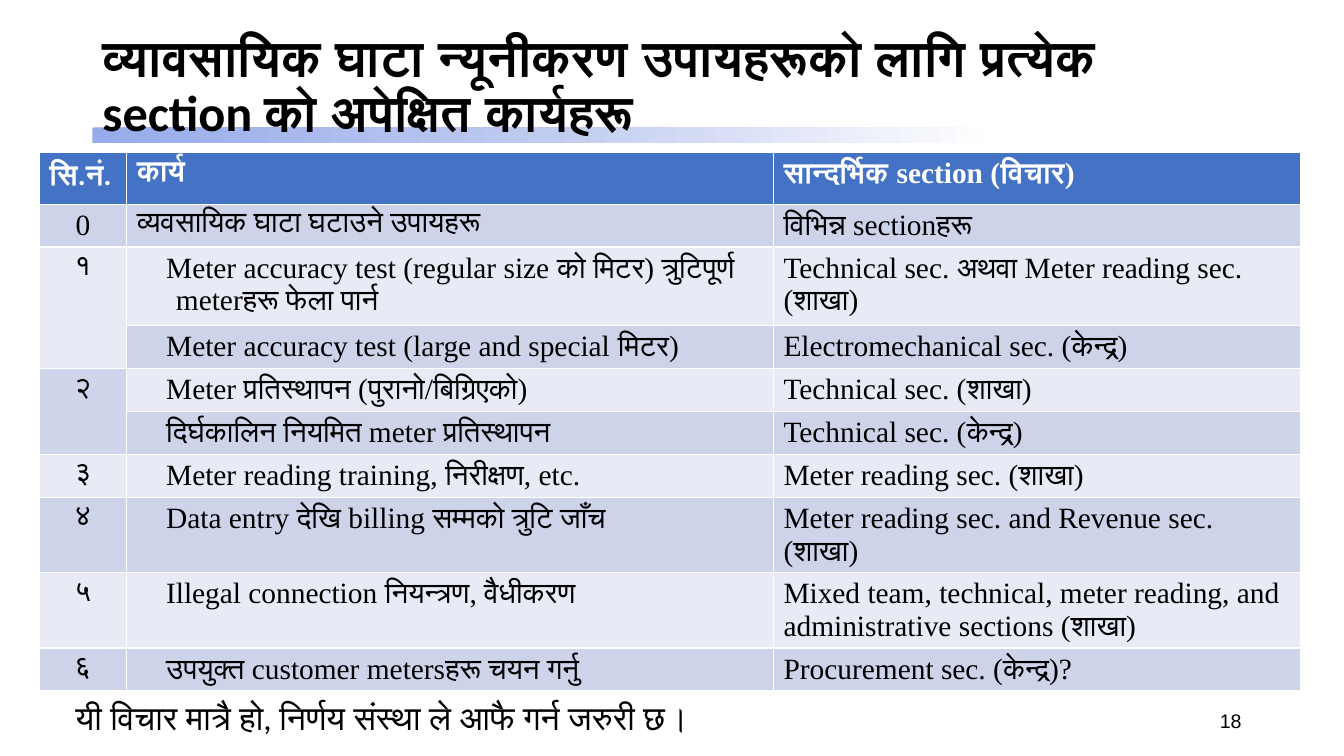
from copy import deepcopy
from pptx import Presentation
from pptx.dml.color import RGBColor as RGB
from pptx.enum.shapes import MSO_SHAPE as SHAPE
from pptx.enum.text import MSO_ANCHOR as ANCHOR, PP_ALIGN as ALIGN
from pptx.util import Pt

COLORS = {
    "black": "000000", "white": "FFFFFF", "head": "4472C4",
    "dark": "CDD4EA", "light": "E8EBF5", "merged": "CFD5EA",
    "bar": "96ABEA", "mid": "C0CBF0",
}
SERIF = "Times New Roman"


def color(name):
    return RGB.from_string(COLORS[name])


def write(frame, text, size, face, bold=False, ink="black", align=ALIGN.LEFT):
    """Fill a text frame with one styled paragraph and return it."""
    frame.word_wrap = True
    para = frame.paragraphs[0]
    para.text = text
    para.alignment = align
    font = para.font
    font.size, font.name, font.bold = Pt(size), face, bold
    font.color.rgb = color(ink)
    return para


deck = Presentation()
deck.slide_width, deck.slide_height = Pt(960), Pt(540)
slide = deck.slides.add_slide(deck.slide_layouts[5])
shapes = slide.shapes

# Title over a fading bar
title = shapes.title
title.left, title.top, title.width, title.height = Pt(66), Pt(19.5), Pt(828), Pt(86)
title.text_frame.vertical_anchor = ANCHOR.MIDDLE
para = write(title.text_frame,
             "व्यावसायिक घाटा न्यूनीकरण उपायहरूको लागि प्रत्येक section को अपेक्षित कार्यहरू",
             36, "Calibri", bold=True)
para.line_spacing = 0.9

bar = shapes.add_shape(SHAPE.ROUNDED_RECTANGLE, Pt(66), Pt(91), Pt(653), Pt(11.5))
bar.adjustments[0] = 0.1
bar.shadow.inherit = False
bar.line.fill.background()
bar.fill.gradient()
bar.fill.gradient_angle = 0
first = bar.element.spPr.find(".//{*}gs")
first.addnext(deepcopy(first))
for stop, (spot, name) in zip(bar.fill.gradient_stops,
                              [(0, "bar"), (0.5, "mid"), (0.99, "white")]):
    stop.position = spot
    stop.color.rgb = color(name)
title.element.addprevious(bar.element)

# Table of tasks and sections
rows = [
    ("सि.नं.", "कार्य", "सान्दर्भिक section (विचार)"),
    ("0", "व्यवसायिक घाटा घटाउने उपायहरू", "विभिन्न sectionहरू"),
    ("१", "Meter accuracy test (regular size को मिटर) त्रुटिपूर्ण meterहरू फेला पार्न",
     "Technical sec. अथवा Meter reading sec. (शाखा)"),
    ("", "Meter accuracy test (large and special मिटर)", "Electromechanical sec. (केन्द्र)"),
    ("२", "Meter प्रतिस्थापन (पुरानो/बिग्रिएको)", "Technical sec. (शाखा)"),
    ("", "दिर्घकालिन नियमित meter प्रतिस्थापन", "Technical sec. (केन्द्र)"),
    ("३", "Meter reading training, निरीक्षण, etc.", "Meter reading sec. (शाखा)"),
    ("४", "Data entry देखि billing सम्मको त्रुटि जाँच",
     "Meter reading sec. and Revenue sec. (शाखा)"),
    ("५", "Illegal connection नियन्त्रण, वैधीकरण",
     "Mixed team, technical, meter reading, and administrative sections (शाखा)"),
    ("६", "उपयुक्त customer metersहरू चयन गर्नु", "Procurement sec. (केन्द्र)?"),
]
heights = [37, 30, 56, 30.7, 30.7, 30.7, 30.7, 53.3, 53.3, 30.7]
widths = [62.5, 462, 376.5]
table = shapes.add_table(len(rows), 3, Pt(28), Pt(109), Pt(sum(widths)), Pt(sum(heights))).table
for col, width in zip(table.columns, widths):
    col.width = Pt(width)
for r, (row, height) in enumerate(zip(rows, heights)):
    table.rows[r].height = Pt(height)
    head = r == 0
    for c, text in enumerate(row):
        cell = table.cell(r, c)
        cell.fill.solid()
        cell.fill.fore_color.rgb = color("head" if head else "dark" if r % 2 else "light")
        if not text:
            continue
        para = write(cell.text_frame, text, 21, "Calibri" if head and c == 0 else SERIF,
                     head, "white" if head else "black",
                     ALIGN.LEFT if head or c else ALIGN.CENTER)
        if c == 1 and r > 1:
            props = para._p.get_or_add_pPr()
            props.set("marL", str(Pt(28)))
            props.set("indent", str(Pt(-7)))
for r in (2, 4):
    table.cell(r, 0).merge(table.cell(r + 1, 0))
table.cell(4, 0).fill.fore_color.rgb = color("merged")

# Closing remark and page number
note = shapes.add_textbox(Pt(47), Pt(494.5), Pt(873), Pt(36))
write(note.text_frame, "यी विचार मात्रै हो, निर्णय संस्था ले आफै गर्न जरुरी छ।", 24, "Calibri")
page = shapes.add_textbox(Pt(678), Pt(500.5), Pt(216), Pt(28.75))
page.text_frame.vertical_anchor = ANCHOR.MIDDLE
write(page.text_frame, "18", 14, "Arial", align=ALIGN.RIGHT)

deck.save("out.pptx")
